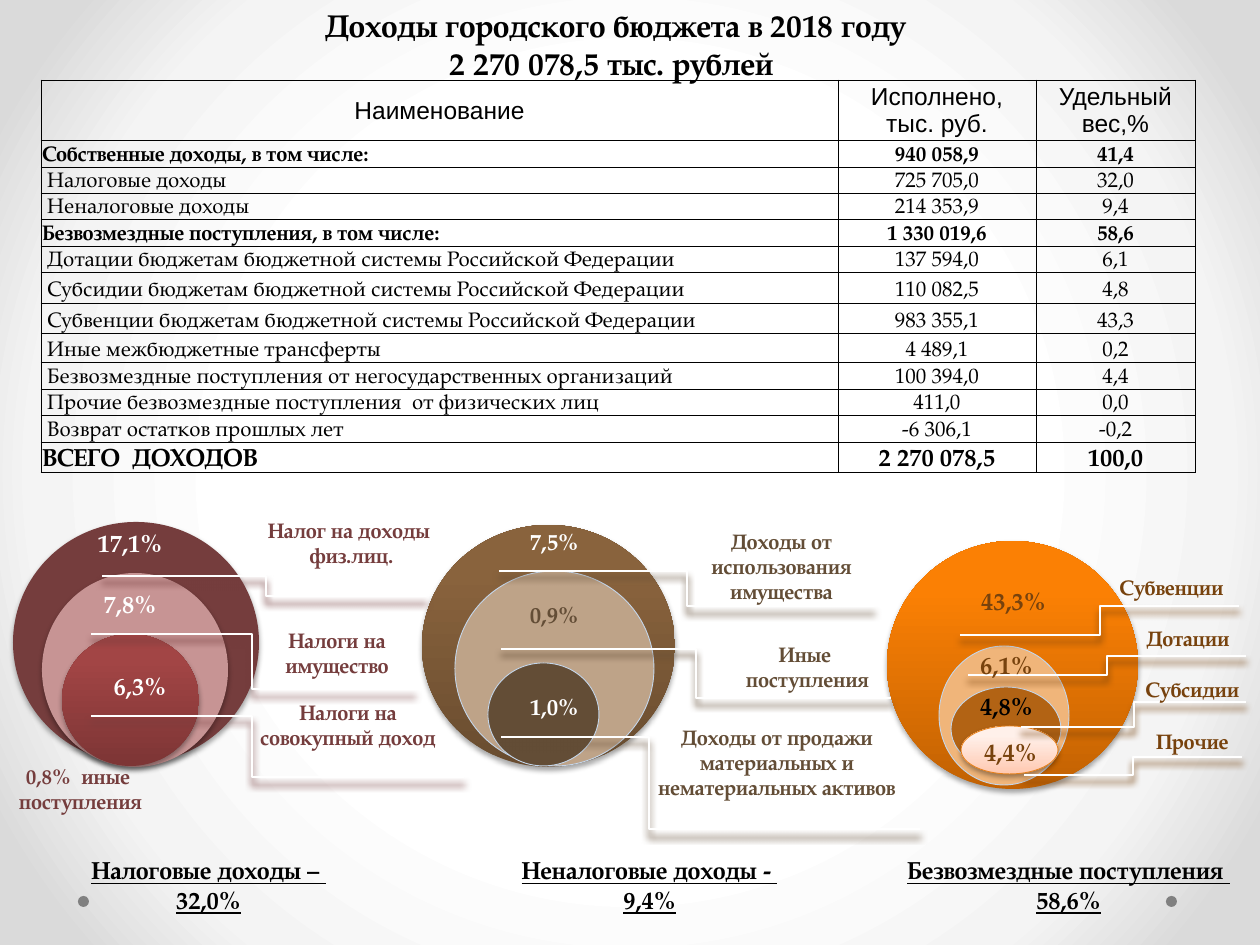
from lxml.etree import SubElement
from pptx import Presentation
from pptx.dml.color import RGBColor
from pptx.enum.shapes import MSO_CONNECTOR as Connector, MSO_SHAPE as Shape
from pptx.enum.text import MSO_ANCHOR as Anchor, MSO_AUTO_SIZE as AutoSize, PP_ALIGN as Align
from pptx.oxml import parse_xml
from pptx.oxml.ns import nsdecls, qn
from pptx.util import Emu, Pt

PX = 914400 / 126
SERIF = "TeX Gyre Pagella"
BLACK, WHITE = "000000", "FFFFFF"
ORANGE, RED, BROWN = "77420D", "753D3D", "634D36"
color = RGBColor.from_string


def write_lines(frame, lines, size, ink, bold=True, underline=False, align=Align.CENTER, font=SERIF):
    for index, line in enumerate(lines):
        paragraph = frame.paragraphs[0] if index == 0 else frame.add_paragraph()
        paragraph.alignment = align
        run = paragraph.add_run()
        run.text = line
        run.font.name = font
        run.font.size = Pt(size)
        run.font.bold = bold
        run.font.underline = underline
        run.font.color.rgb = color(ink)


def add_shadow(shape, ink, opacity, blur, distance):
    properties = shape._element.spPr
    effects = properties.find(qn("a:effectLst"))
    if effects is None:
        effects = SubElement(properties, qn("a:effectLst"))
    shadow = SubElement(effects, qn("a:outerShdw"), blurRad=str(Pt(blur)),
                        dist=str(Pt(distance)), dir="5400000", rotWithShape="0")
    tint = SubElement(shadow, qn("a:srgbClr"), val=ink)
    SubElement(tint, qn("a:alpha"), val=str(opacity * 1000))


presentation = Presentation()
presentation.slide_width = Emu(round(1260 * PX))
presentation.slide_height = Emu(round(945 * PX))
slide = presentation.slides.add_slide(presentation.slide_layouts[5])

slide.background.fill.solid()
background = slide.element.find(".//" + qn("p:bgPr"))
stops = "".join(
    f'<a:gs pos="{position}000"><a:srgbClr val="{ink}"/></a:gs>'
    for position, ink in ((50, WHITE), (76, "F4F4F4"), (92, "DADADA"))
)
background.replace(background[0], parse_xml(
    f'<a:gradFill {nsdecls("a")} rotWithShape="1"><a:gsLst>{stops}</a:gsLst>'
    '<a:path path="circle"><a:fillToRect l="50000" t="50000" r="50000" b="50000"/></a:path></a:gradFill>'
))

title = slide.shapes.title
title.left, title.top, title.width, title.height = (Emu(round(n * PX)) for n in (135, 0, 961, 89))
title.text_frame.auto_size = AutoSize.NONE
title.text_frame.vertical_anchor = Anchor.TOP
write_lines(title.text_frame, ["Доходы городского бюджета в 2018 году", "2 270 078,5 тыс. рублей "], 18, BLACK)

rows = [
    (60, "Наименование", "Исполнено,\nтыс. руб.", "Удельный вес,%"),
    (27, "Собственные доходы, в том числе:", "940 058,9", "41,4"),
    (26, " Налоговые доходы", "725 705,0", "32,0"),
    (26, " Неналоговые доходы", "214 353,9", "9,4"),
    (27, "Безвозмездные поступления, в том числе:", "1 330 019,6", "58,6"),
    (26, " Дотации бюджетам бюджетной системы Российской Федерации", "137 594,0", "6,1"),
    (31, " Субсидии бюджетам бюджетной системы Российской Федерации", "110 082,5", "4,8"),
    (31, " Субвенции бюджетам бюджетной системы Российской Федерации", "983 355,1", "43,3"),
    (29, " Иные межбюджетные трансферты", "4 489,1", "0,2"),
    (27, " Безвозмездные поступления от негосударственных организаций", "100 394,0", "4,4"),
    (26, " Прочие безвозмездные поступления  от физических лиц", "411,0", "0,0"),
    (27, " Возврат остатков прошлых лет", "-6 306,1", "-0,2"),
    (30, "ВСЕГО  ДОХОДОВ", "2 270 078,5", "100,0"),
]
widths = (797, 198, 159)
table_box = (41, 80, sum(widths), sum(row[0] for row in rows))
table = slide.shapes.add_table(len(rows), 3, *(Emu(round(n * PX)) for n in table_box)).table
table.first_row = table.horz_banding = False
for column, width in zip(table.columns, widths):
    column.width = Emu(round(width * PX))
for row_index, (height, *texts) in enumerate(rows):
    table.rows[row_index].height = Emu(round(height * PX))
    header = row_index == 0
    for column_index, text in enumerate(texts):
        cell = table.cell(row_index, column_index)
        cell.margin_left = cell.margin_right = cell.margin_top = Emu(round(PX))
        cell.margin_bottom = 0
        cell.vertical_anchor = Anchor.MIDDLE if header else Anchor.BOTTOM
        write_lines(cell.text_frame, text.split("\n"), 14 if row_index in (0, 12) else 12, BLACK,
                    bold=row_index in (1, 4, 12),
                    align=Align.CENTER if header or column_index else Align.LEFT,
                    font="Arial" if header else SERIF)
        cell.fill.background()
        for index, side in enumerate(("lnL", "lnR", "lnT", "lnB")):
            cell._tc.tcPr.insert(index, parse_xml(
                f'<a:{side} {nsdecls("a")} w="6350"><a:solidFill><a:srgbClr val="{BLACK}"/></a:solidFill></a:{side}>'
            ))

PALE_BLUE = "C4D6EB"
ellipses = [
    ((78, 896, 11, 11), ["808080"], None, False),
    ((1166, 896, 11, 11), ["808080"], None, False),
    ((887, 541, 251, 248), ["C26203", "FB8004"], None, True),
    ((939, 646, 130, 139), ["F0B57A"], PALE_BLUE, False),
    ((951, 687, 110, 84), ["B26314"], PALE_BLUE, False),
    ((13, 522, 246, 241), [RED], None, True),
    ((42, 573, 186, 194), ["C79494"], None, True),
    ((62, 634, 137, 132), ["7D3535", "A24545"], None, True),
    ((422, 525, 253, 242), ["694C2F", "89633D"], None, True),
    ((455, 571, 199, 195), ["BEA388"], PALE_BLUE, False),
    ((488, 663, 111, 103), [BROWN], PALE_BLUE, False),
    ((961, 726, 97, 48), ["FFC9B1", "FFF0EA"], "E6811C", True),
]
for box, fills, outline, shadowed in ellipses:
    shape = slide.shapes.add_shape(Shape.OVAL, *(Emu(round(n * PX)) for n in box))
    shape.shadow.inherit = False
    if len(fills) == 1:
        shape.fill.solid()
        shape.fill.fore_color.rgb = color(fills[0])
    else:
        shape.fill.gradient()
        shape.fill.gradient_angle = 90
        for stop, ink, position in zip(shape.fill.gradient_stops, fills, (0, 0.8)):
            stop.color.rgb = color(ink)
            stop.position = position
    if outline:
        shape.line.color.rgb = color(outline)
        shape.line.width = Pt(0.5)
    else:
        shape.line.fill.background()
    if shadowed:
        add_shadow(shape, BLACK, 35, 3.1, 1.8)

leaders = [
    (960, 635, 1239, 606, 1100, ORANGE),
    (968, 675, 1246, 656, 1107, ORANGE),
    (1021, 727, 1246, 702, 1134, ORANGE),
    (1024, 775, 1242, 757, 1133, ORANGE),
    (102, 576, 426, 596, 266, RED),
    (91, 634, 415, 689, 252, RED),
    (91, 716, 464, 777, 252, RED),
    (499, 571, 874, 606, 687, BROWN),
    (501, 649, 891, 698, 696, BROWN),
    (501, 737, 920, 829, 649, BROWN),
]
for left, start, right, end, bend, ink in leaders:
    connector = slide.shapes.add_connector(Connector.ELBOW, *(Emu(round(n * PX)) for n in (left, start, right, end)))
    connector.line.color.rgb = color(WHITE)
    connector.line.width = Pt(1.25)
    guides = connector._element.spPr.find(qn("a:prstGeom")).get_or_add_avLst()
    SubElement(guides, qn("a:gd"), name="adj1", fmla=f"val {round((bend - left) / (right - left) * 100000)}")
    add_shadow(connector, ink, 100, 4, 4)

labels = [
    ((25, 849, 367, 72), ["Налоговые доходы – ", "32,0%"], 14, BLACK),
    ((471, 849, 357, 72), ["Неналоговые доходы - ", "9,4%"], 14, BLACK),
    ((843, 849, 451, 72), ["Безвозмездные поступления ", "58,6%"], 14, BLACK),
    ((21, 522, 218, 43), ["17,1%"], 14, WHITE),
    ((21, 583, 218, 43), ["7,8%"], 14, WHITE),
    ((31, 665, 218, 43), ["6,3%"], 14, WHITE),
    ((248, 511, 207, 63), ["Налог на доходы ", "физ.лиц."], 12, RED),
    ((228, 621, 218, 63), ["Налоги на имущество"], 12, RED),
    ((239, 693, 218, 63), ["Налоги на совокупный доход"], 12, RED),
    ((-2, 757, 165, 63), ["0,8%  иные ", "поступления"], 12, RED),
    ((432, 522, 244, 43), ["7,5%"], 13, WHITE),
    ((432, 595, 244, 43), ["0,9%"], 13, BROWN),
    ((432, 687, 244, 43), ["1,0%"], 13, WHITE),
    ((687, 522, 189, 115), ["Доходы от использования имущества"], 12, BROWN),
    ((675, 635, 265, 63), ["Иные ", "поступления"], 12, BROWN),
    ((638, 718, 278, 115), ["Доходы от продажи материальных и нематериальных активов"], 12, BROWN),
    ((910, 580, 207, 43), ["43,3%"], 14, ORANGE),
    ((965, 644, 83, 43), ["6,1%"], 14, ORANGE),
    ((951, 685, 111, 43), ["4,8%"], 14, BLACK),
    ((955, 731, 111, 43), ["4,4%"], 14, ORANGE),
    ((1097, 568, 149, 38), ["Субвенции"], 12, ORANGE),
    ((1107, 619, 167, 38), ["Дотации "], 12, ORANGE),
    ((1074, 670, 242, 38), ["Субсидии "], 12, ORANGE),
    ((1074, 722, 242, 38), ["Прочие "], 12, ORANGE),
]
for box, lines, size, ink in labels:
    shape = slide.shapes.add_textbox(*(Emu(round(n * PX)) for n in box))
    shape.text_frame.word_wrap = True
    write_lines(shape.text_frame, lines, size, ink, underline=box[1] == 849)

presentation.save("out.pptx")
